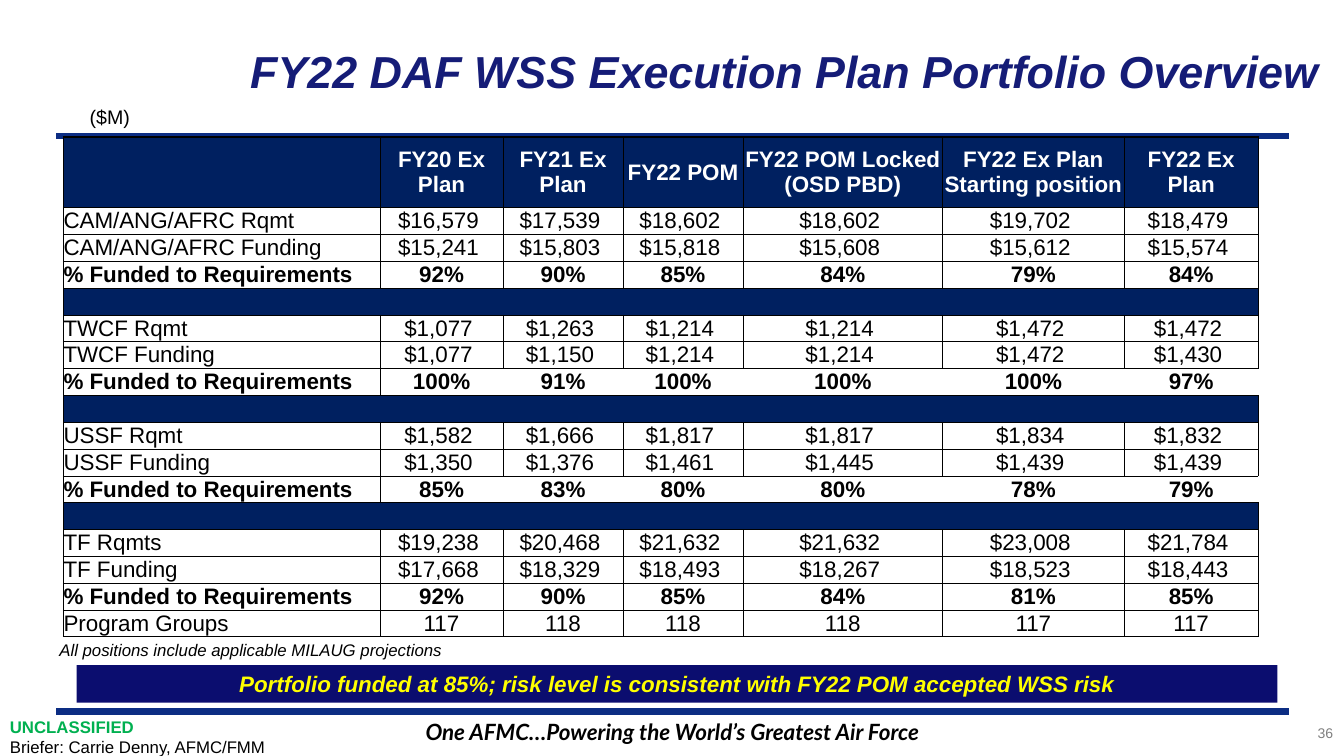
from dataclasses import dataclass
from typing import Optional

from lxml.etree import SubElement
from pptx import Presentation
from pptx.dml.color import RGBColor
from pptx.enum.shapes import MSO_CONNECTOR as Connector, MSO_SHAPE as Preset
from pptx.enum.text import MSO_ANCHOR as Anchor, PP_ALIGN as Align
from pptx.oxml.ns import qn
from pptx.util import Emu, Pt

EMU_PER_PX = 9144  # 100 px to the inch
NAVY, BLACK, WHITE = "002060", "000000", "FFFFFF"
RULE_BLUE = "0C2D83"
THIN, THICK = 0.5, 1.0
SIDES = ("L", "R", "T", "B")


@dataclass(frozen=True)
class Line:
    text: str
    size: int
    color: str = BLACK
    bold: bool = False
    italic: bool = False
    font: str = "Arial"


@dataclass(frozen=True)
class Box:
    left: int
    top: int
    width: int
    height: int
    lines: tuple[Line, ...]
    align: Align = Align.LEFT
    anchor: Anchor = Anchor.TOP
    wrap: bool = True
    fill: Optional[str] = None
    insets: tuple[int, int, int, int] = (10, 5, 10, 5)


@dataclass(frozen=True)
class Row:
    """A table row; one without a label is a solid band, an open one has no inner lines."""
    label: str = ""
    values: tuple[str, ...] = ()
    bold: bool = False
    open: bool = False


def dollars(label: str, *amounts: int) -> Row:
    return Row(label, tuple(f"${amount:,} " for amount in amounts))


def funded(*percents: int, open: bool = False) -> Row:
    return Row("% Funded to Requirements", tuple(f"{p}%" for p in percents), True, open)


BAND = Row()
HEADERS = ("", "FY20 Ex Plan", "FY21 Ex Plan", "FY22 POM", "FY22 POM Locked (OSD PBD)",
           "FY22 Ex Plan Starting position", "FY22 Ex Plan")
COLUMN_WIDTHS = (314, 122, 119, 119, 198, 180, 133)
TABLE_LEFT, TABLE_TOP, HEADER_HEIGHT, BODY_HEIGHT = 63, 136, 70, 426
ROWS = (
    dollars("CAM/ANG/AFRC Rqmt", 16579, 17539, 18602, 18602, 19702, 18479),
    dollars("CAM/ANG/AFRC Funding", 15241, 15803, 15818, 15608, 15612, 15574),
    funded(92, 90, 85, 84, 79, 84),
    BAND,
    dollars("TWCF Rqmt", 1077, 1263, 1214, 1214, 1472, 1472),
    dollars("TWCF Funding", 1077, 1150, 1214, 1214, 1472, 1430),
    funded(100, 91, 100, 100, 100, 97, open=True),
    BAND,
    dollars("USSF Rqmt", 1582, 1666, 1817, 1817, 1834, 1832),
    dollars("USSF Funding", 1350, 1376, 1461, 1445, 1439, 1439),
    funded(85, 83, 80, 80, 78, 79, open=True),
    BAND,
    dollars("TF Rqmts", 19238, 20468, 21632, 21632, 23008, 21784),
    dollars("TF Funding", 17668, 18329, 18493, 18267, 18523, 18443),
    funded(92, 90, 85, 84, 81, 85),
    Row("Program Groups", ("117", "118", "118", "118", "117", "117")),
)

RULE_LEFT, RULE_RIGHT, RULE_TOPS = 56, 1278, (706, 135)
BOXES = (
    # Footer motto, title, unit and footnote
    Box(56, 708, 1222, 37, (Line("One AFMC…Powering the World’s Greatest Air Force", 16,
                                 bold=True, italic=True, font="Lato"),), Align.CENTER),
    Box(106, 34, 1203, 63, (Line("FY22 DAF WSS Execution Plan Portfolio Overview", 32,
                                 "151C77", True, True),),
        Align.RIGHT, Anchor.MIDDLE, insets=(0, 9, 0, 0)),
    Box(79, 99, 80, 34, (Line("($M)", 14),)),
    Box(49, 630, 412, 30, (Line("All positions include applicable MILAUG projections", 12,
                                italic=True),), wrap=False),
    # Conclusion bar, slide number and marking
    Box(76, 660, 1191, 37,
        (Line("Portfolio funded at 85%; risk level is consistent with FY22 POM accepted WSS risk",
              16, "FFFF00", True, True),), Align.CENTER, fill="0B0D6F"),
    Box(1165, 714, 167, 33, (Line("36", 10, "808080"),), Align.RIGHT),
    Box(0, 706, 353, 50, (Line("UNCLASSIFIED", 12, "00B050", True),
                          Line("Briefer: Carrie Denny, AFMC/FMM", 12))),
)


def px(length: int) -> Emu:
    return Emu(length * EMU_PER_PX)


def rgb(color: str) -> RGBColor:
    return RGBColor.from_string(color)


def write(paragraph, line: Line, align: Align) -> None:
    paragraph.text = line.text
    paragraph.alignment = align
    font = paragraph.font
    font.name, font.size = line.font, Pt(line.size)
    font.bold, font.italic = line.bold, line.italic
    font.color.rgb = rgb(line.color)


def draw_rule(slide, top: int) -> None:
    rule = slide.shapes.add_connector(Connector.STRAIGHT, px(RULE_LEFT), px(top),
                                      px(RULE_RIGHT), px(top))
    rule.line.color.rgb = rgb(RULE_BLUE)
    rule.line.width = Pt(4.5)
    SubElement(rule.element.spPr, qn("a:effectLst"))


def draw_box(slide, box: Box) -> None:
    place = [px(length) for length in (box.left, box.top, box.width, box.height)]
    if box.fill:
        shape = slide.shapes.add_shape(Preset.RECTANGLE, *place)
        shape.shadow.inherit = False
        shape.fill.solid()
        shape.fill.fore_color.rgb = rgb(box.fill)
        shape.line.fill.background()
    else:
        shape = slide.shapes.add_textbox(*place)
    frame = shape.text_frame
    frame.word_wrap = box.wrap
    frame.vertical_anchor = box.anchor
    (frame.margin_left, frame.margin_top,
     frame.margin_right, frame.margin_bottom) = map(px, box.insets)
    for index, line in enumerate(box.lines):
        paragraph = frame.add_paragraph() if index else frame.paragraphs[0]
        write(paragraph, line, box.align)


def edge_widths(row: Optional[Row], column: int, is_last: bool) -> tuple[float, ...]:
    """Left, right, top and bottom line widths of a cell; the header has no Row."""
    is_header, is_band = row is None, row == BAND
    is_open = row is not None and row.open
    first, final = column == 0, column == len(COLUMN_WIDTHS) - 1
    left = right = THIN
    if first and not is_band:
        left = THICK
    elif (is_band and not first) or (is_open and column > 1):
        left = 0
    if final and (is_header or is_last):
        right = THICK
    elif (is_band and not final) or (is_open and not first):
        right = 0
    return left, right, THICK if is_header else THIN, THICK if is_last else THIN


def set_borders(cell, widths: tuple[float, ...]) -> None:
    properties = cell._tc.get_or_add_tcPr()
    for side, width in zip(SIDES, widths):
        border = SubElement(properties, qn(f"a:ln{side}"), w=str(Pt(width)))
        if width:
            SubElement(SubElement(border, qn("a:solidFill")), qn("a:srgbClr"), val=BLACK)
        else:
            SubElement(border, qn("a:noFill"))


def draw_cell(cell, line: Line, align: Align, fill: Optional[str],
              borders: tuple[float, ...]) -> None:
    cell.margin_left = cell.margin_right = cell.margin_top = cell.margin_bottom = 0
    cell.vertical_anchor = Anchor.MIDDLE
    set_borders(cell, borders)
    if fill:
        cell.fill.solid()
        cell.fill.fore_color.rgb = rgb(fill)
    else:
        cell.fill.background()
    write(cell.text_frame.paragraphs[0], line, align)


def draw_table(slide) -> None:
    table = slide.shapes.add_table(
        len(ROWS) + 1, len(COLUMN_WIDTHS), px(TABLE_LEFT), px(TABLE_TOP),
        px(sum(COLUMN_WIDTHS)), px(HEADER_HEIGHT + BODY_HEIGHT)).table
    table.first_row = table.horz_banding = False
    for column, width in zip(table.columns, COLUMN_WIDTHS):
        column.width = px(width)
    for index, row in enumerate((None, *ROWS)):
        table.rows[index].height = px(BODY_HEIGHT) // len(ROWS) if row else px(HEADER_HEIGHT)
        texts = (row.label, *row.values) if row else HEADERS
        for column in range(len(COLUMN_WIDTHS)):
            text = texts[column] if column < len(texts) else ""
            line = Line(text, 16, BLACK if row else WHITE, row.bold if row else True)
            draw_cell(table.cell(index, column), line, Align.CENTER if column else Align.LEFT,
                      NAVY if row in (None, BAND) else None,
                      edge_widths(row, column, index == len(ROWS)))


def main() -> None:
    presentation = Presentation()
    presentation.slide_width, presentation.slide_height = px(1333), px(750)
    slide = presentation.slides.add_slide(presentation.slide_layouts[6])
    for top in RULE_TOPS:
        draw_rule(slide, top)
    draw_table(slide)
    for box in BOXES:
        draw_box(slide, box)
    presentation.save("out.pptx")


if __name__ == "__main__":
    main()
